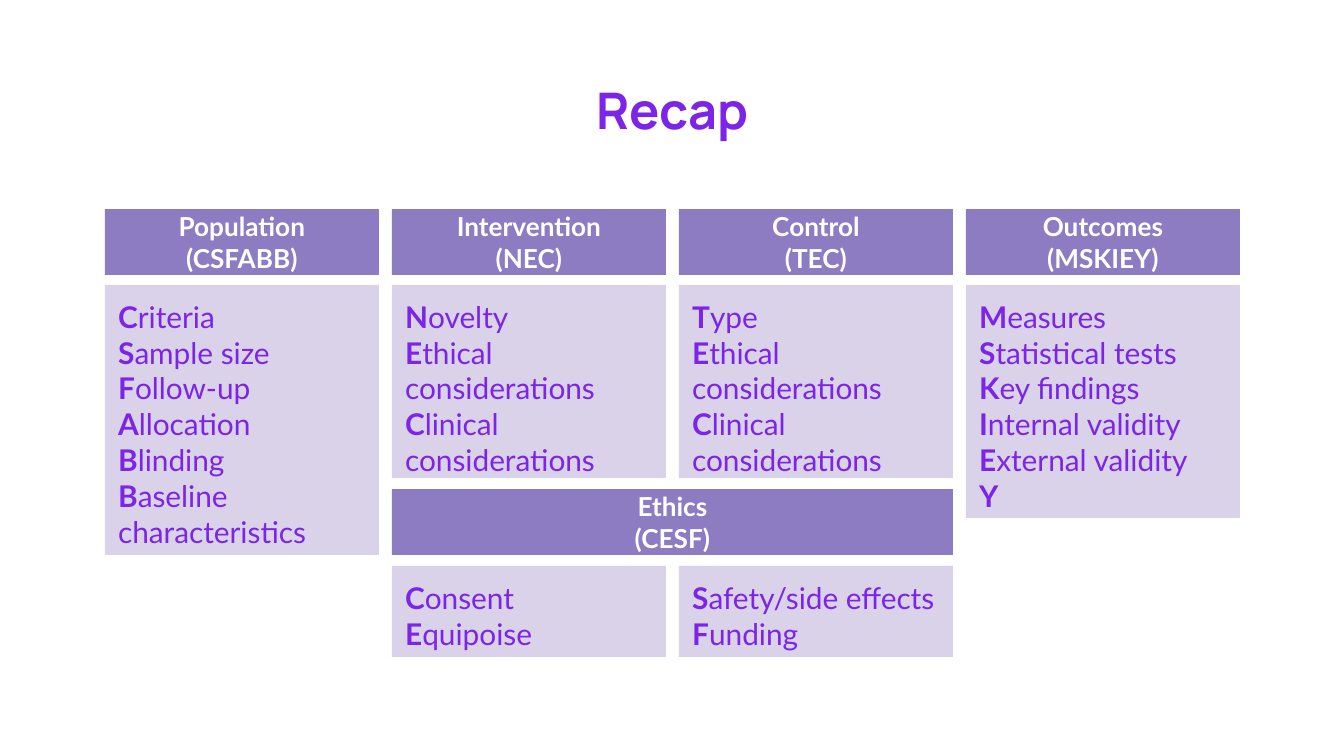
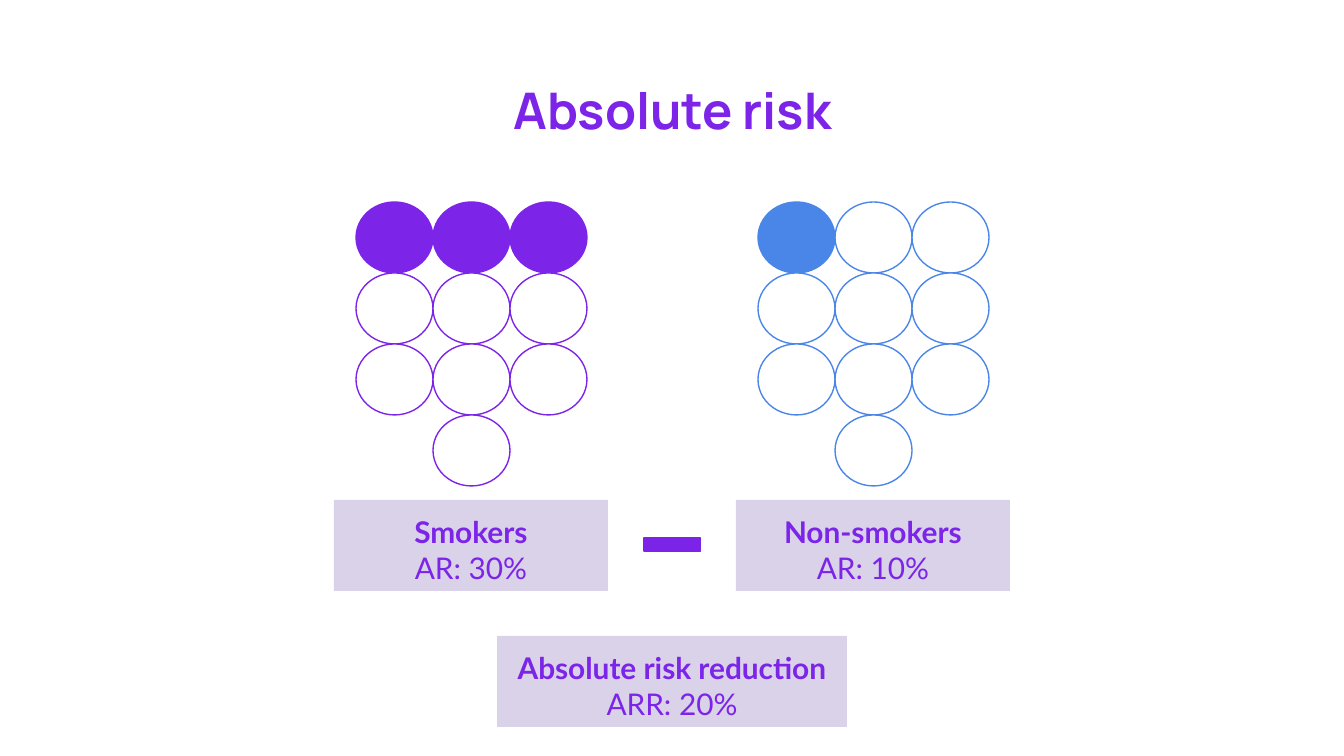
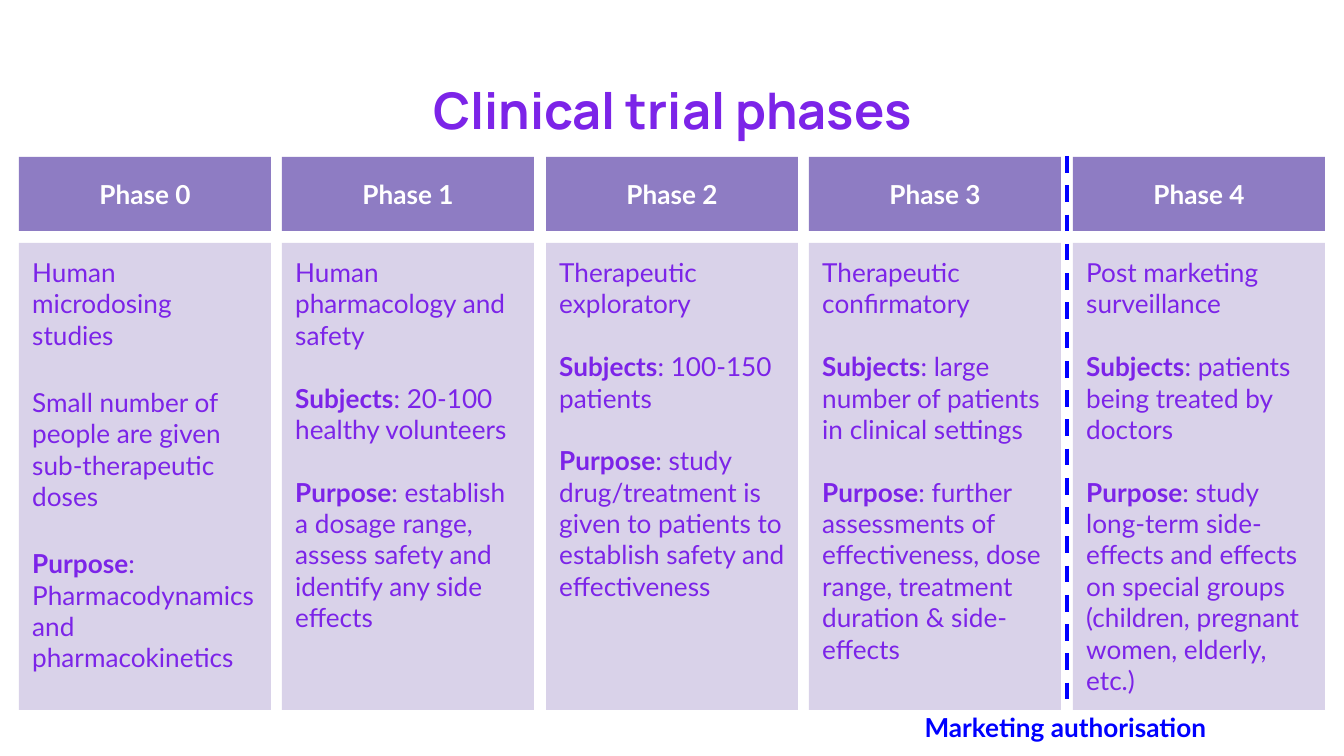
from lxml import etree
from pptx import Presentation
from pptx import util as u
from pptx.dml.color import RGBColor
from pptx.enum import dml, shapes, text

PX = 914400 / 134.4
PURPLE, BAND, PALE, BLUE = "7C24E8", "8E7CC3", "D9D2E9", "4A86E8"
MARKET, WHITE = "0000FF", "FFFFFF"
RECT, OVAL, MINUS = (shapes.MSO_SHAPE.RECTANGLE, shapes.MSO_SHAPE.OVAL,
                     shapes.MSO_SHAPE.MATH_MINUS)
LEFT, CENTER = text.PP_ALIGN.LEFT, text.PP_ALIGN.CENTER
TOP, MIDDLE = text.MSO_ANCHOR.TOP, text.MSO_ANCHOR.MIDDLE

# Look of each kind of text box
TITLE = dict(kind=None, size=27, font="Manrope", align=CENTER)
HEADER = dict(fill=BAND, size=14, color=WHITE, align=CENTER, anchor=MIDDLE)
BODY = dict(fill=PALE)
RESULT = dict(fill=PALE, align=CENTER)
PHASE = dict(fill=PALE, size=14)
LABEL = dict(kind=None, size=14, color=MARKET, align=CENTER, anchor=MIDDLE)


def rgb(value):
    return RGBColor.from_string(value)


def add_box(s, x, y, w, h, lines=(), kind=RECT, fill=None, line=None, size=16,
            color=PURPLE, font="Lato", align=LEFT, anchor=TOP, gaps=None):
    """Add a shape, or a text box if kind is None. Text between * is bold;
    gaps maps a line's index to the points of space before it."""
    at = [u.Emu(round(v * PX)) for v in (x, y, w, h)]
    if kind is None:
        sp = s.shapes.add_textbox(*at)
    else:
        sp = s.shapes.add_shape(kind, *at)
        sp.shadow.inherit = False
        sp.fill.solid()
        sp.fill.fore_color.rgb = rgb(fill)
        if line:
            sp.line.color.rgb = rgb(line)
            sp.line.width = u.Pt(0.75)
        else:
            sp.line.fill.background()
    if not lines:
        return sp
    tf = sp.text_frame
    tf.word_wrap = True
    tf.vertical_anchor = anchor
    tf.margin_left = tf.margin_right = tf.margin_top = tf.margin_bottom = u.Inches(0.1)
    tf.text = "\n".join(lines)
    for i, p in enumerate(tf.paragraphs):
        p.alignment = align
        if gaps and i in gaps:
            p.space_before = u.Pt(gaps[i])
        parts = p.text.split("*")
        p.clear()
        for n, part in enumerate(parts):
            if part:
                r = p.add_run()
                r.text = part
                r.font.name, r.font.size = font, u.Pt(size)
                r.font.bold = n % 2 == 1
                r.font.color.rgb = rgb(color)
    return sp


prs = Presentation()
prs.slide_width, prs.slide_height = round(1344 * PX), round(756 * PX)
slides = []
for title in ("Recap", "Absolute risk", "Clinical trial phases"):
    s = prs.slides.add_slide(prs.slide_layouts[6])
    add_box(s, 46, 66, 1253, 91, [f"*{title}*"], **TITLE)
    slides.append(s)
recap, risk, phases = slides

# Recap: four columns, with ethics under the middle two
columns = [
    ("Population", "CSFABB", 270, ["Criteria", "Sample size", "Follow-up", "Allocation",
                                   "Blinding", "Baseline characteristics"]),
    ("Intervention", "NEC", 193, ["Novelty", "Ethical considerations",
                                  "Clinical considerations"]),
    ("Control", "TEC", 193, ["Type", "Ethical considerations", "Clinical considerations"]),
    ("Outcomes", "MSKIEY", 233, ["Measures", "Statistical tests", "Key findings",
                                 "Internal validity", "External validity", "Y"]),
]
col_x = [105 + 287 * i for i in range(4)]
for x, (name, letters, height, items) in zip(col_x, columns):
    add_box(recap, x, 209, 274, 66, [f"*{name}*", f"*({letters})*"], **HEADER)
    add_box(recap, x, 285, 274, height, [f"*{t[0]}*{t[1:]}" for t in items], **BODY)
add_box(recap, col_x[1], 489, 561, 66, ["*Ethics*", "*(CESF)*"], **HEADER)
ethics = [("Consent", "Equipoise"), ("Safety/side effects", "Funding")]
for x, items in zip(col_x[1:], ethics):
    add_box(recap, x, 566, 274, 91, [f"*{t[0]}*{t[1:]}" for t in items], **BODY)

# Absolute risk: ten people in each group, the affected ones filled
people = [(col, row) for row in range(3) for col in range(3)] + [(1, 3)]
groups = [("Smokers", 334, PURPLE, 3), ("Non-smokers", 736, BLUE, 1)]
for name, x, color, affected in groups:
    for i, (col, row) in enumerate(people):
        add_box(risk, x + 22 + 77 * col, 202 + 71 * row, 77, 71, kind=OVAL,
                fill=color if i < affected else WHITE, line=color)
    add_box(risk, x, 500, 274, 91, [f"*{name}*", f"AR: {affected * 10}%"], **RESULT)
add_box(risk, 497, 636, 350, 91, ["*Absolute risk reduction*", "ARR: 20%"], **RESULT)
minus = add_box(risk, 634, 517, 77, 55, kind=MINUS, fill="7B23E7", line="7B23E7")
minus.adjustments[0] = 0.235

# Clinical trial phases: five columns
phase_texts = [
    ["Human microdosing studies", "Small number of people are given sub-therapeutic doses",
     "*Purpose*:", "Pharmacodynamics and pharmacokinetics"],
    ["Human pharmacology and safety", "*Subjects*: 20-100 healthy volunteers",
     "*Purpose*: establish a dosage range, assess safety and identify any side effects"],
    ["Therapeutic exploratory", "*Subjects*: 100-150 patients",
     "*Purpose*: study drug/treatment is given to patients to establish safety "
     "and effectiveness"],
    ["Therapeutic confirmatory",
     "*Subjects*: large number of patients in clinical settings",
     "*Purpose*: further assessments of effectiveness, dose range, treatment duration "
     "& side-effects"],
    ["Post marketing surveillance", "*Subjects*: patients being treated by doctors",
     "*Purpose*: study long-term side-effects and effects on special groups "
     "(children, pregnant women, elderly, etc.)"],
]
for i, lines in enumerate(phase_texts):
    x = 19 + 527 * i // 2
    gap = 16.8 if i else 19.2
    add_box(phases, x, 157, 252, 74, [f"*Phase {i}*"], **HEADER)
    add_box(phases, x, 243, 252, 467, lines, gaps={1: gap, 2: gap}, **PHASE)

ends = [u.Emu(round(v * PX)) for v in (1067, 156, 1067, 710)]
cx = phases.shapes.add_connector(shapes.MSO_CONNECTOR.STRAIGHT, *ends)
cx.line.color.rgb = rgb(MARKET)
cx.line.width = u.Pt(2.25)
cx.line.dash_style = dml.MSO_LINE.DASH
etree.SubElement(cx._element.spPr,
                 "{http://schemas.openxmlformats.org/drawingml/2006/main}effectLst")
add_box(phases, 904, 710, 323, 35, ["*Marketing authorisation*"], **LABEL)

prs.save("out.pptx")
